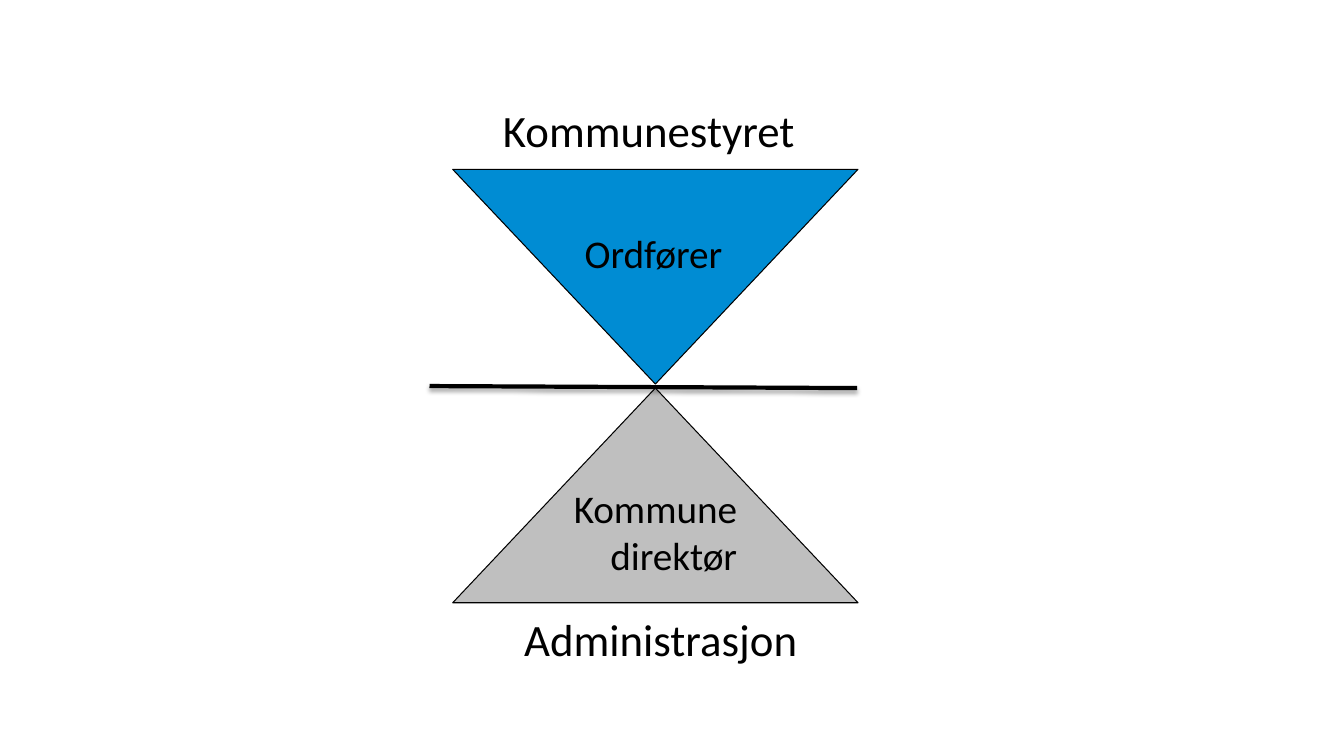
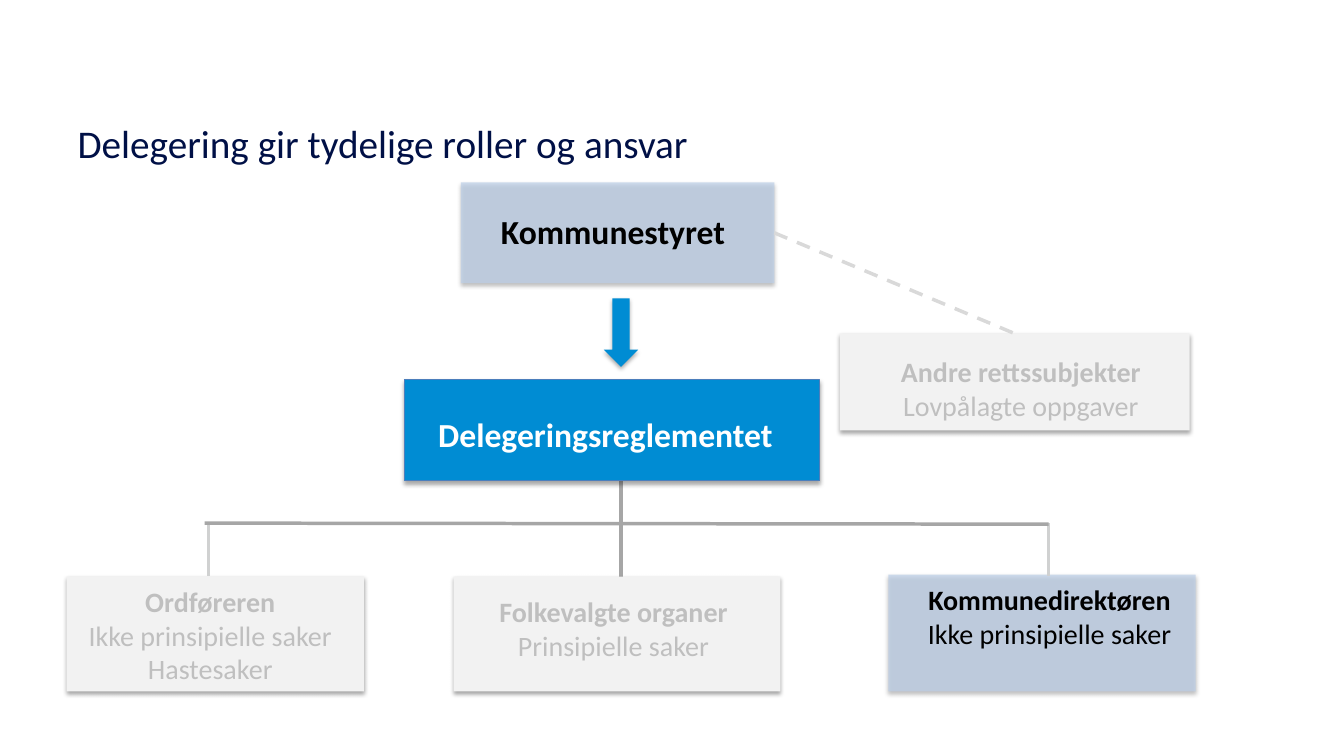
"""Build two slides on roles and delegation in a municipality."""
from lxml.etree import SubElement
from pptx import Presentation
from pptx.dml.color import RGBColor
from pptx.enum.dml import MSO_LINE
from pptx.enum.shapes import MSO_CONNECTOR, MSO_SHAPE as SHAPE
from pptx.enum.text import MSO_ANCHOR, PP_ALIGN as ALIGN
from pptx.oxml.ns import qn
from pptx.util import Pt

EMU_PER_PX = 9144
FONT = "Calibri"
BLACK, WHITE, NAVY = "000000", "FFFFFF", "001046"
BLUE, BLUE_EDGE, PALE_BLUE = "008CD3", "4B7EBC", "BCCFE8"
PALE_GREY, SILVER, GREY = "F2F2F2", "BFBFBF", "A6A6A6"
BRANCH_GREY, DASH_GREY = "D0D1D1", "D9D9D9"
TOP, BOTTOM, RIGHT = 0, 2, 3


def px(*lengths):
    return [length * EMU_PER_PX for length in lengths]


def color(hex_code):
    return RGBColor.from_string(hex_code)


def set_effects(item, shadow):
    effects = SubElement(item._element.spPr, qn("a:effectLst"))
    if shadow:
        outer = SubElement(effects, qn("a:outerShdw"), blurRad="40000",
                           dist="23000", dir="5400000", rotWithShape="0")
        tint = SubElement(outer, qn("a:srgbClr"), val=BLACK)
        SubElement(tint, qn("a:alpha"), val="35000")


def add_figure(slide, kind, box, fill, edge=None, shadow=True, opacity=100):
    figure = slide.shapes.add_shape(kind, *px(*box))
    figure.fill.solid()
    figure.fill.fore_color.rgb = color(fill)
    if opacity < 100:
        tint = figure._element.spPr.find(".//" + qn("a:srgbClr"))
        SubElement(tint, qn("a:alpha"), val=str(opacity * 1000))
    if edge:
        figure.line.color.rgb = color(edge)
        figure.line.width = Pt(0.75)
    else:
        figure.line.fill.background()
    set_effects(figure, shadow)
    return figure


def add_line(slide, ends, stroke, width=2.5, shadow=False, dash=None):
    line = slide.shapes.add_connector(MSO_CONNECTOR.STRAIGHT, *px(*ends))
    line.line.color.rgb = color(stroke)
    line.line.width = Pt(width)
    if dash:
        line.line.dash_style = dash
    set_effects(line, shadow)
    return line


def write(paragraph, text, size, ink, bold=False, align=ALIGN.LEFT):
    paragraph.alignment = align
    run = paragraph.add_run()
    run.text = text
    run.font.name = FONT
    run.font.size = Pt(size)
    run.font.bold = bold
    run.font.color.rgb = color(ink)


def add_label(slide, box, lines, size, ink=BLACK, bold_first=False,
              align=ALIGN.LEFT):
    frame = slide.shapes.add_textbox(*px(*box)).text_frame
    frame.word_wrap = True
    for index, text in enumerate(lines):
        paragraph = frame.add_paragraph() if index else frame.paragraphs[0]
        write(paragraph, text, size, ink, bold_first and index == 0, align)


def add_title(slide, text):
    title = slide.shapes.title
    title.left, title.top, title.width, title.height = px(67, 80, 1200, 124)
    title.text_frame.vertical_anchor = MSO_ANCHOR.MIDDLE
    write(title.text_frame.paragraphs[0], text, 28, NAVY)


def build_hourglass(slide):
    politics = add_figure(slide, SHAPE.FLOWCHART_EXTRACT, (449, 168, 402, 213),
                          BLUE, BLACK, shadow=False)
    politics.rotation = 180
    add_figure(slide, SHAPE.FLOWCHART_EXTRACT, (449, 385, 402, 213),
               SILVER, BLACK, shadow=False)
    add_line(slide, (850, 385, 426, 383), BLACK, 3, shadow=True)
    add_label(slide, (489, 97, 321, 64), ["Kommunestyret"], 32)
    add_label(slide, (570, 223, 168, 57), ["Ordfører"], 28)
    add_label(slide, (547, 476, 194, 104), ["Kommune", "direktør"], 28,
              align=ALIGN.RIGHT)
    add_label(slide, (510, 602, 305, 64), ["Administrasjon"], 32)


def build_delegation(slide):
    add_title(slide, "Delegering gir tydelige roller og ansvar")
    add_line(slide, (616, 572, 616, 474), GREY)

    council = add_figure(slide, SHAPE.RECTANGLE, (457, 181, 311, 100),
                         PALE_BLUE, opacity=70)
    add_label(slide, (487, 204, 271, 50), ["Kommunestyret"], 24,
              bold_first=True)
    add_figure(slide, SHAPE.RECTANGLE, (401, 377, 412, 100), BLUE, BLUE_EDGE)
    add_label(slide, (417, 406, 367, 50), ["Delegeringsreglementet"], 24,
              WHITE, True, ALIGN.CENTER)
    add_figure(slide, SHAPE.DOWN_ARROW, (599, 296, 34, 68), BLUE)

    roles = [
        ((450, 572, 324, 114), (458, 585, 301, 77), PALE_GREY, SILVER, 100,
         ["Folkevalgte organer", "Prinsipielle saker"]),
        ((66, 572, 295, 114), (74, 575, 269, 111), PALE_GREY, SILVER, 100,
         ["Ordføreren", "Ikke prinsipielle saker", "Hastesaker"]),
        ((881, 570, 305, 116), (903, 573, 276, 77), PALE_BLUE, BLACK, 70,
         ["Kommunedirektøren", "Ikke prinsipielle saker"]),
        ((833, 331, 347, 96), (869, 347, 287, 77), PALE_GREY, SILVER, 100,
         ["Andre rettssubjekter", "Lovpålagte oppgaver"]),
    ]
    for box, label_box, fill, ink, opacity, lines in roles:
        role = add_figure(slide, SHAPE.RECTANGLE, box, fill, opacity=opacity)
        add_label(slide, label_box, lines, 20, ink, True, ALIGN.CENTER)
    other_entities = role

    link = add_line(slide, (768, 231, 1006, 331), DASH_GREY,
                    dash=MSO_LINE.DASH)
    link.begin_connect(council, RIGHT)
    link.end_connect(other_entities, TOP)
    for x in (207, 1040):
        add_line(slide, (x, 571, x, 519), BRANCH_GREY)
    add_line(slide, (203, 519, 1040, 520), GREY)


def main():
    deck = Presentation()
    deck.slide_width, deck.slide_height = px(1333, 750)
    title_only, blank = deck.slide_layouts[5], deck.slide_layouts[6]
    build_hourglass(deck.slides.add_slide(blank))
    build_delegation(deck.slides.add_slide(title_only))
    deck.save("out.pptx")


if __name__ == "__main__":
    main()
